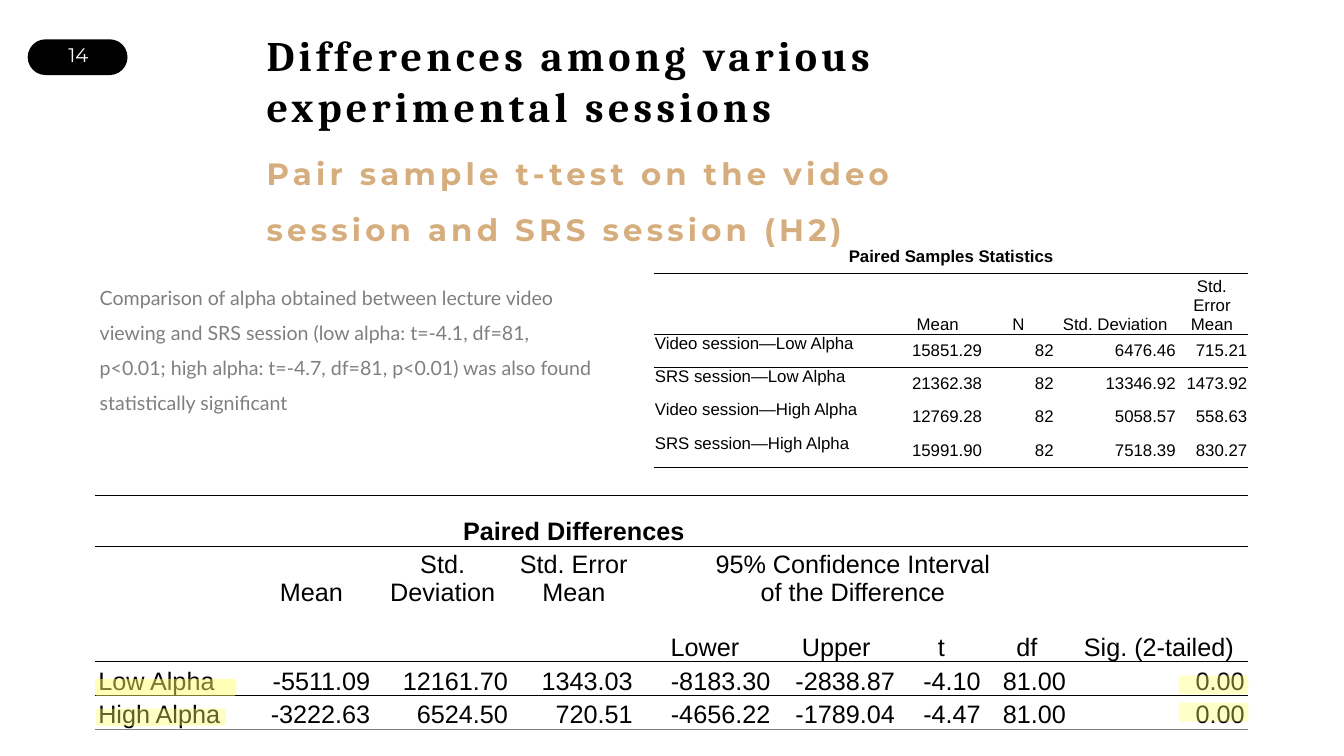
from lxml import etree
from pptx import Presentation
from pptx import util as u
from pptx.dml.color import RGBColor
from pptx.enum import shapes, text
from pptx.oxml import parse_xml
from pptx.oxml.ns import qn

A = text.PP_ALIGN
V = text.MSO_ANCHOR
NS = "http://schemas.openxmlformats.org/drawingml/2006/main"
NO_STYLE = "{2D5ABB26-0587-4C30-8999-92F81FD0307C}"
COLORS = {"ink": "000000", "paper": "FFFFFF", "gold": "D6AE7E", "grey": "7F7F7F", "marker": "FFFF66"}
SLIDE = (26.66, 15)

PILL = (2.06, 5.2, 7.43, 4.73)
TEXTS = [
    {"at": (4.13, 5.07, 4.2, 4.47), "text": "14", "color": "paper",
     "font": {"name": "Montserrat", "size": u.Pt(28)}, "para": {"alignment": A.CENTER},
     "frame": {"word_wrap": False, "margin_left": u.Inches(0.09), "margin_right": u.Inches(0.3),
               "margin_top": u.Inches(0.1), "margin_bottom": u.Inches(0.1)}},
    {"at": (19.47, 3.6, 58.78, 14.13), "text": "Differences among various experimental sessions",
     "color": "ink", "font": {"name": "Cambria", "size": u.Pt(60), "bold": True}, "spacing": 6},
    {"at": (19.47, 17.73, 53.6, 14.73), "color": "gold", "spacing": 6,
     "text": "Pair sample t-test on the video session and SRS session (H2)",
     "font": {"name": "Montserrat", "size": u.Pt(44), "bold": True}, "para": {"line_spacing": 1.5}},
    {"at": (7.05, 35.87, 37.51, 19.53), "color": "grey",
     "text": "Comparison of alpha obtained between lecture video viewing and SRS session "
             "(low alpha: t=-4.1, df=81, p<0.01; high alpha: t=-4.7, df=81, p<0.01) "
             "was also found statistically significant",
     "font": {"name": "Lato", "size": u.Pt(28)}, "para": {"line_spacing": 1.5}},
]

DIFFERENCES = {
    "at": (7.05, 61, 85.82, 34.73),
    "cols": (3.06, 2.47, 2.73, 2.47, 2.73, 2.47, 1.7, 1.69, 3.54),
    "heights": (0.67, 1.02, 1.09, 1.09, 0.67, 0.67),
    "rows": [
        [],
        ["", "Paired Differences"],
        ["", "Mean", "Std. Deviation", "Std. Error Mean", "95% Confidence Interval\nof the Difference"],
        ["", "", "", "", "Lower", "Upper", "t", "df", "Sig. (2-tailed)"],
        ["Low Alpha", "-5511.09", "12161.70", "1343.03", "-8183.30", "-2838.87", "-4.10", "81.00", "0.00"],
        ["High Alpha", "-3222.63", "6524.50", "720.51", "-4656.22", "-1789.04", "-4.47", "81.00", "0.00"],
    ],
    "spans": [(0, 0, 8), (1, 1, 5), (2, 4, 7)],
    "rules": {0: "ink", 3: "ink", 5: "grey"}, "rule_width": 1,
    "size": 36, "bold_row": 1, "margins": (0.07, 0, 0.07, 0),
    "heads": [V.BOTTOM] * 4, "label": V.BOTTOM, "value": V.BOTTOM,
}
STATISTICS = {
    "at": (48.69, 31.67, 44.15, 29.27),
    "cols": (4.73, 1.78, 1.42, 2.42, 1.42),
    "heights": (0.66, 1.09, 0.66, 0.66, 0.66, 0.66),
    "rows": [
        ["Paired Samples Statistics"],
        ["", "Mean", "N", "Std. Deviation", "Std. Error Mean"],
        ["Video session—Low Alpha", "15851.29", "82", "6476.46", "715.21"],
        ["SRS session—Low Alpha", "21362.38", "82", "13346.92", "1473.92"],
        ["Video session—High Alpha", "12769.28", "82", "5058.57", "558.63"],
        ["SRS session—High Alpha", "15991.90", "82", "7518.39", "830.27"],
    ],
    "spans": [(0, 0, 4)],
    "rules": {0: "ink", 1: "ink", 5: "ink"}, "rule_width": 0.5,
    "size": 24, "bold_row": 0, "margins": (0.01, 0.01, 0.01, 0),
    "heads": [V.MIDDLE, V.BOTTOM], "label": V.TOP, "value": V.MIDDLE,
}
HIGHLIGHTS = [
    ((87.7, 89.33, 5.18, 2.53), 37),
    ((87.7, 92.93, 5.18, 2.53), 35),
    ((7.05, 89.8, 10.54, 2.27), 47),
    ((7.13, 93.73, 9.68, 2.27), 38),
]


def rgb(name):
    return RGBColor.from_string(COLORS[name])


def place(at):
    return [u.Inches(share * SLIDE[i % 2] / 100) for i, share in enumerate(at)]


def apply(obj, values):
    for key, value in values.items():
        setattr(obj, key, value)


def add_pill(s, at, color, alpha=None, adj=None):
    sp = s.shapes.add_shape(shapes.MSO_SHAPE.ROUNDED_RECTANGLE, *place(at))
    sp.shadow.inherit = False
    sp.fill.solid()
    sp.fill.fore_color.rgb = rgb(color)
    sp.line.fill.background()
    if adj:
        sp.adjustments[0] = adj
    if alpha:
        clr = sp.fill._xPr.find(qn("a:solidFill"))[0]
        etree.SubElement(clr, qn("a:alpha"), val=str(alpha * 1000))


def add_text(s, item):
    tf = s.shapes.add_textbox(*place(item["at"])).text_frame
    apply(tf, {"word_wrap": True, "auto_size": text.MSO_AUTO_SIZE.SHAPE_TO_FIT_TEXT, **item.get("frame", {})})
    p = tf.paragraphs[0]
    apply(p, item.get("para", {}))
    r = p.add_run()
    r.text = item["text"]
    apply(r.font, item["font"])
    r.font.color.rgb = rgb(item["color"])
    if "spacing" in item:
        r.font._element.set("spc", str(item["spacing"] * 100))


def add_rule(cell, edge, color, width):
    ln = parse_xml(f'<a:{edge} xmlns:a="{NS}" w="{u.Pt(width)}"><a:solidFill>'
                   f'<a:srgbClr val="{COLORS[color]}"/></a:solidFill></a:{edge}>')
    cell._tc.get_or_add_tcPr().insert(0, ln)


def fill_cell(cell, words, t, row, col):
    head = row < len(t["heads"])
    side = "label" if col == 0 else "value"
    margins = zip(("left", "top", "right", "bottom"), t["margins"])
    apply(cell, {f"margin_{k}": u.Inches(v) for k, v in margins})
    cell.vertical_anchor = t["heads"][row] if head else t[side]
    cell.fill.background()
    cell.text = words
    for p in cell.text_frame.paragraphs:
        p.alignment = A.CENTER if head else A.LEFT if col == 0 else A.RIGHT
        for r in p.runs:
            apply(r.font, {"name": "Arial", "size": u.Pt(t["size"]), "bold": row == t["bold_row"]})
            r.font.color.rgb = rgb("ink")


def add_grid(s, t):
    x, y, w, h = place(t["at"])
    frame = s.shapes.add_table(len(t["heights"]), len(t["cols"]), x, y, w, h)
    tbl = frame.table
    apply(tbl, {"first_row": False, "horz_banding": False})
    tbl._tbl.tblPr.find(qn("a:tableStyleId")).text = NO_STYLE
    for column, share in zip(tbl.columns, t["cols"]):
        column.width = int(w * share / sum(t["cols"]))
    for line, share in zip(tbl.rows, t["heights"]):
        line.height = int(h * share / sum(t["heights"]))
    for row, words in enumerate(t["rows"]):
        for col in range(len(t["cols"])):
            cell = tbl.cell(row, col)
            fill_cell(cell, words[col] if col < len(words) else "", t, row, col)
            for edge, ruled in (("lnB", row), ("lnT", row - 1)):
                if ruled in t["rules"]:
                    add_rule(cell, edge, t["rules"][ruled], t["rule_width"])
    for row, first, last in t["spans"]:
        tbl.cell(row, first).merge(tbl.cell(row, last))


def main():
    prs = Presentation()
    prs.slide_width, prs.slide_height = [u.Inches(v) for v in SLIDE]
    s = prs.slides.add_slide(prs.slide_layouts[6])
    add_pill(s, PILL, "ink", adj=0.5)
    for item in TEXTS:
        add_text(s, item)
    add_grid(s, DIFFERENCES)
    for at, alpha in HIGHLIGHTS:
        add_pill(s, at, "marker", alpha=alpha)
    add_grid(s, STATISTICS)
    prs.save("out.pptx")


if __name__ == "__main__":
    main()
